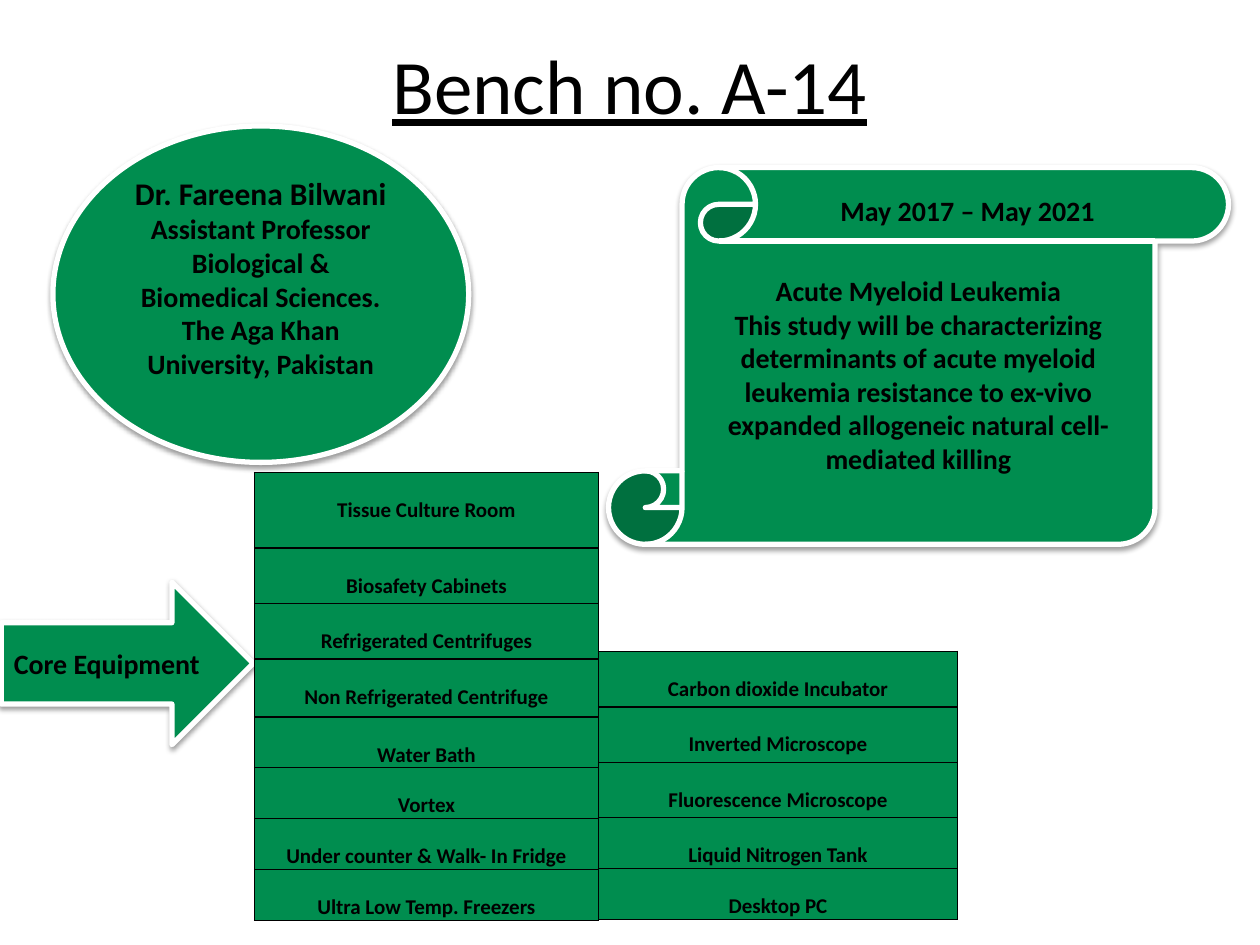
from lxml import etree
from pptx import Presentation
from pptx.dml.color import RGBColor
from pptx.enum import shapes, text
from pptx.oxml import ns
from pptx.util import Inches, Pt

GREEN, BLACK, WHITE = "008D4F", "000000", "FFFFFF"
LINE_HEIGHT = 0.2

CORE_EQUIPMENT = [
    ("Tissue Culture Room", 0.6),
    ("Biosafety Cabinets", 0.44),
    ("Refrigerated Centrifuges", 0.44),
    ("Non Refrigerated Centrifuge", 0.46),
    ("Water Bath", 0.4),
    ("Vortex", 0.4),
    ("Under counter & Walk- In Fridge", 0.4),
    ("Ultra Low Temp. Freezers", 0.4),
]
MORE_EQUIPMENT = [
    ("Carbon dioxide Incubator", 0.44),
    ("Inverted Microscope", 0.44),
    ("Fluorescence Microscope", 0.44),
    ("Liquid Nitrogen Tank", 0.4),
    ("Desktop PC", 0.4),
]
RESEARCHER = [
    "Dr. Fareena Bilwani",
    "Assistant Professor",
    "Biological & Biomedical Sciences.",
    "The Aga Khan University, Pakistan",
]
STUDY = [
    "Acute Myeloid Leukemia",
    "This study will be characterizing determinants of acute myeloid leukemia "
    "resistance to ex-vivo expanded allogeneic natural cell-mediated killing",
]


def color(value):
    """Turn a hex string into a colour."""
    return RGBColor.from_string(value)


def write(frame, lines, size=16, first_size=None, bold=True, underline=False,
          anchor=text.MSO_ANCHOR.MIDDLE, wrap=True):
    """Fill a text frame with centred paragraphs."""
    frame.word_wrap = wrap
    frame.vertical_anchor = anchor
    for index, line in enumerate(lines):
        paragraph = frame.add_paragraph() if index else frame.paragraphs[0]
        paragraph.alignment = text.PP_ALIGN.CENTER
        run = paragraph.add_run()
        run.text = line
        font = run.font
        font.name, font.bold, font.underline = "Calibri", bold, underline
        font.size = Pt(first_size if first_size and index == 0 else size)
        font.color.rgb = color(BLACK)


def add_shadow(shape):
    """Give a shape a soft shadow that falls downwards."""
    effects = shape._element.spPr.find(ns.qn("a:effectLst"))
    shadow = etree.SubElement(
        effects, ns.qn("a:outerShdw"), blurRad=str(Pt(3.1)), dist=str(Pt(1.6)),
        dir="5400000", rotWithShape="0")
    shade = etree.SubElement(shadow, ns.qn("a:srgbClr"), val=BLACK)
    etree.SubElement(shade, ns.qn("a:alpha"), val="38000")


def add_panel(slide, kind, box, lines, outlined=True, **text_format):
    """Add a green shape with text, outlined and shadowed on request."""
    shape = slide.shapes.add_shape(kind, *map(Inches, box))
    shape.shadow.inherit = False
    shape.fill.solid()
    shape.fill.fore_color.rgb = color(GREEN)
    if outlined:
        shape.line.color.rgb = color(WHITE)
        shape.line.width = Pt(3)
        add_shadow(shape)
    else:
        shape.line.fill.background()
    write(shape.text_frame, lines, **text_format)
    return shape


def add_borders(cell):
    """Draw a thin black line on each side of a cell."""
    properties = cell._tc.get_or_add_tcPr()
    for side in ("lnL", "lnR", "lnT", "lnB"):
        line = etree.SubElement(properties, ns.qn(f"a:{side}"), w=str(Pt(1)))
        fill = etree.SubElement(line, ns.qn("a:solidFill"))
        etree.SubElement(fill, ns.qn("a:srgbClr"), val=BLACK)


def add_equipment_table(slide, left, top, width, rows):
    """Add a one-column table of equipment names and row heights."""
    height = sum(row_height for _, row_height in rows)
    table = slide.shapes.add_table(
        len(rows), 1, *map(Inches, (left, top, width, height))).table
    table.first_row = table.horz_banding = False
    for index, (name, row_height) in enumerate(rows):
        table.rows[index].height = Inches(row_height)
        cell = table.cell(index, 0)
        cell.margin_left = cell.margin_right = Inches(0.07)
        cell.margin_top, cell.margin_bottom = Inches(LINE_HEIGHT), 0
        add_borders(cell)
        cell.fill.solid()
        cell.fill.fore_color.rgb = color(GREEN)
        write(cell.text_frame, [name], size=12, anchor=None)


def add_title(slide, title):
    """Place and format the slide title."""
    shape = slide.shapes.title
    shape.left, shape.top, shape.width, shape.height = map(
        Inches, (3, 0.25, 4, 0.84))
    write(shape.text_frame, [title], size=44, bold=False, underline=True,
          anchor=text.MSO_ANCHOR.TOP, wrap=False)


def main():
    """Build the bench slide."""
    presentation = Presentation()
    presentation.slide_width, presentation.slide_height = Inches(10), Inches(7.5)
    slide = presentation.slides.add_slide(presentation.slide_layouts[5])
    kinds = shapes.MSO_SHAPE

    add_title(slide, "Bench no. A-14")
    researcher = add_panel(slide, kinds.OVAL, (0.42, 1, 3.3, 2.67), RESEARCHER,
                           first_size=18)
    researcher.text_frame.margin_bottom = Inches(0.32)
    scroll = add_panel(slide, kinds.VERTICAL_SCROLL, (4.83, 1.33, 4.92, 2.99), STUDY)
    scroll.adjustments[0] = 0.195
    add_panel(slide, kinds.RECTANGLE, (6.25, 1.49, 2.86, 0.37),
              ["May 2017 – May 2021"], outlined=False, anchor=text.MSO_ANCHOR.TOP)
    add_panel(slide, kinds.RIGHT_ARROW, (0.01, 4.62, 2, 1.29), ["Core Equipment"])
    add_equipment_table(slide, 2.02, 3.75, 2.73, CORE_EQUIPMENT)
    add_equipment_table(slide, 4.75, 5.17, 2.85, MORE_EQUIPMENT)
    presentation.save("out.pptx")


if __name__ == "__main__":
    main()
